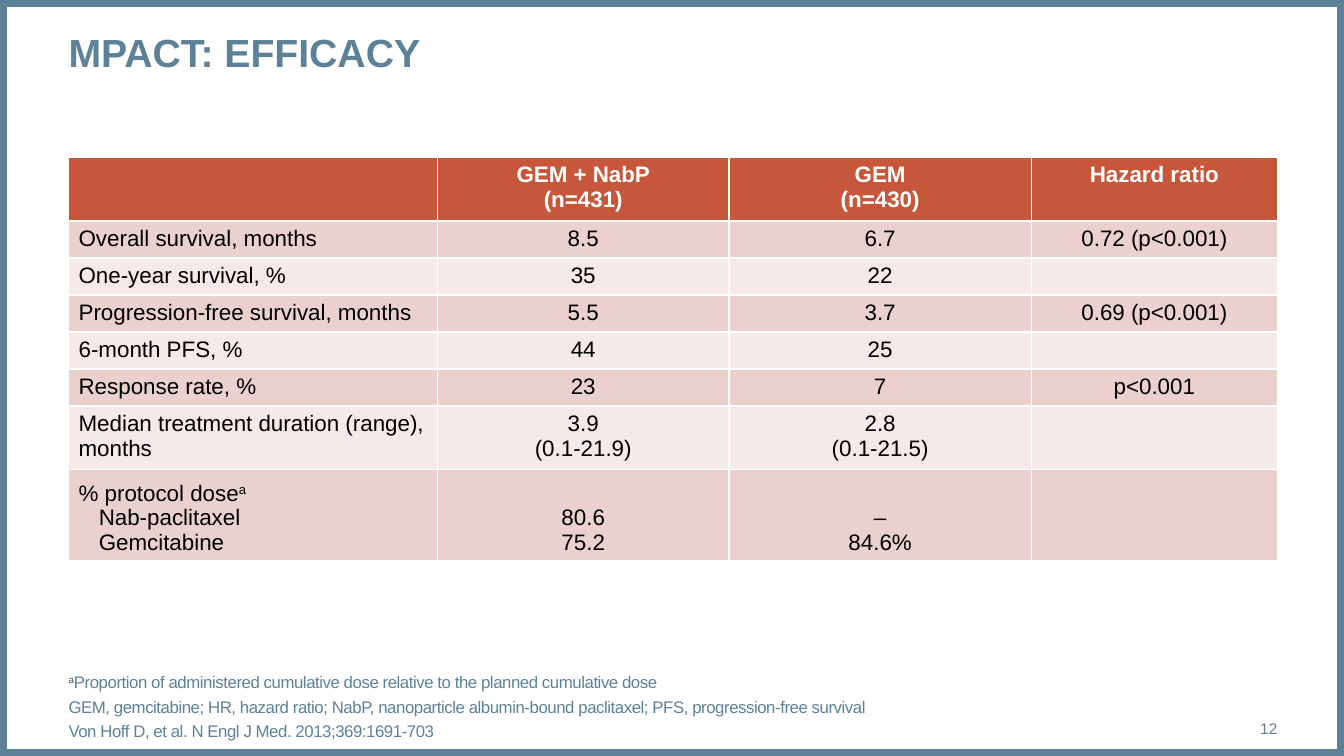
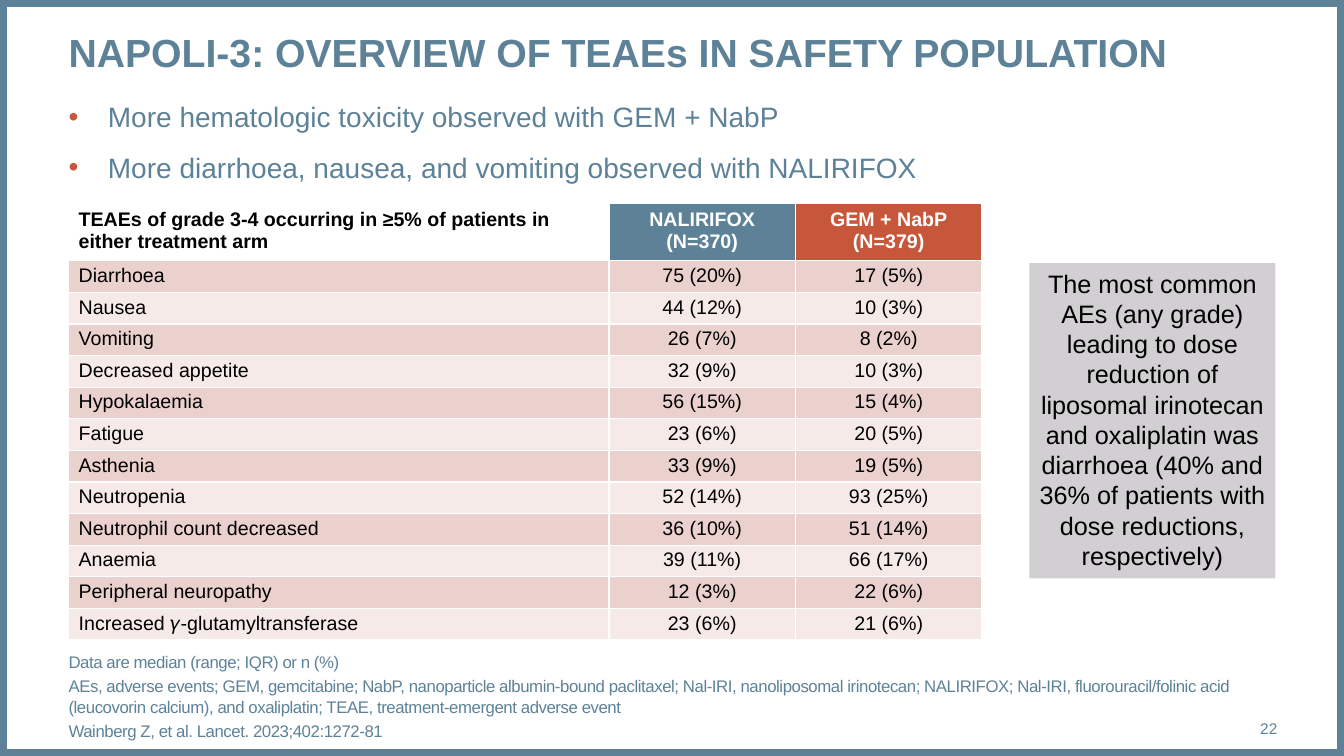
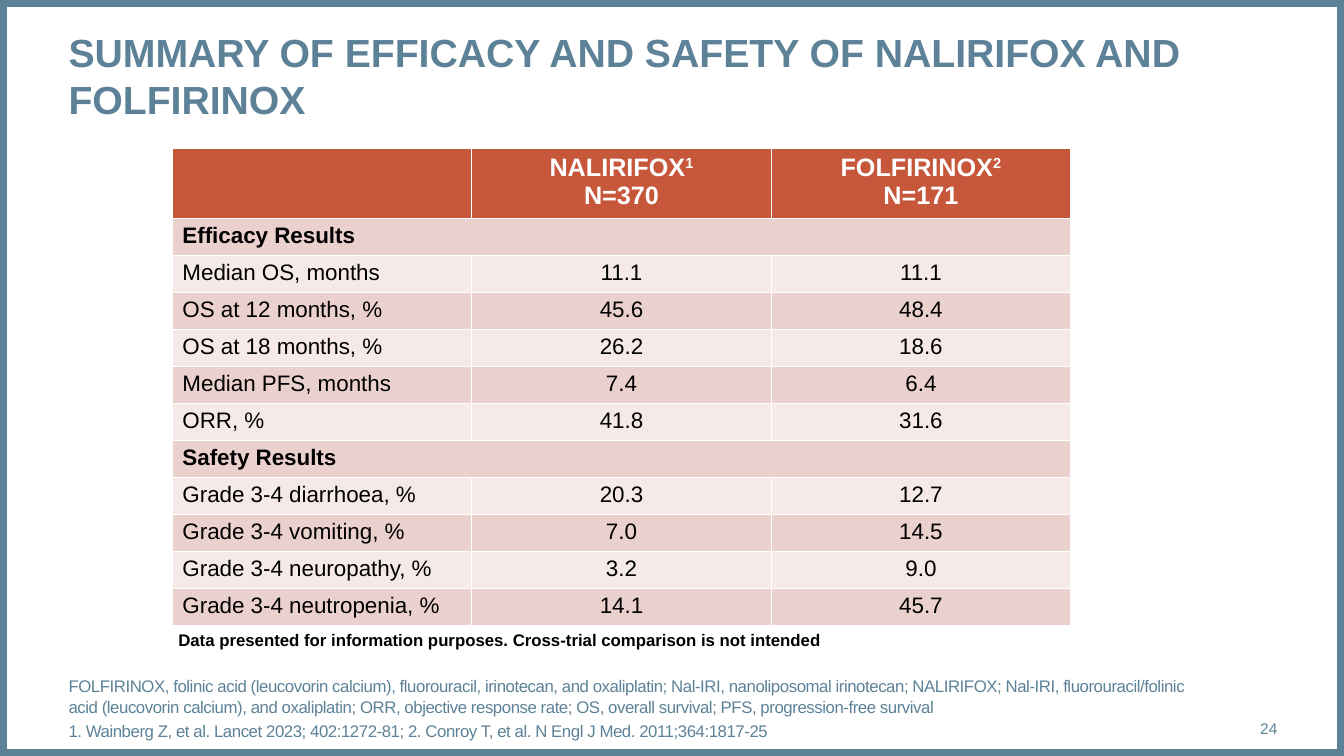
from lxml.etree import SubElement
from pptx import Presentation
from pptx.dml.color import RGBColor
from pptx.enum.shapes import MSO_SHAPE
from pptx.enum.text import MSO_ANCHOR, PP_ALIGN
from pptx.oxml.ns import qn
from pptx.util import Inches, Pt


class Theme:
    font = "Arial"
    blue, red, white, black = "5D8298", "C6573B", "FFFFFF", "000000"
    bands = ("EAD1CE", "F5EAE8")
    callout, marker = "D1CFD1", "505050"
    title, bullet, footer, number, note, box = 28, 20, 12, 11, 12, 18
    left, width = 0.68, 11.99


# "^x^" is superscript, "\n" starts a paragraph, "> " indents one;
# a table row with a single entry spans the whole table.
SLIDES = [
    {
        "title": "MPACT: EFFICACY",
        "number": "12",
        "footer": [
            "^a^Proportion of administered cumulative dose relative to the planned cumulative dose",
            "GEM, gemcitabine; HR, hazard ratio; NabP, nanoparticle albumin-bound paclitaxel; "
            "PFS, progression-free survival",
            "Von Hoff D, et al. N Engl J Med. 2013;369:1691-703",
        ],
        "footer_box": (11.13, 0.68),
        "table": {
            "at": (0.68, 1.56), "cols": (3.66, 2.89, 3, 2.44),
            "heights": [0.58] + [0.34] * 5 + [0.59, 0.84],
            "size": 16, "head_size": 16, "pad": 0.05,
            "head_fills": [Theme.red] * 4,
            "rows": [
                ("", "GEM + NabP\n(n=431)", "GEM\n(n=430)", "Hazard ratio"),
                ("Overall survival, months", "8.5", "6.7", "0.72 (p<0.001)"),
                ("One-year survival, %", "35", "22", ""),
                ("Progression-free survival, months", "5.5", "3.7", "0.69 (p<0.001)"),
                ("6-month PFS, %", "44", "25", ""),
                ("Response rate, %", "23", "7", "p<0.001"),
                ("Median treatment duration (range), months",
                 "3.9\n(0.1-21.9)", "2.8\n(0.1-21.5)", ""),
                ("% protocol dose^a^\n> Nab-paclitaxel\n> Gemcitabine",
                 "80.6\n75.2", "–\n84.6%", ""),
            ],
        },
    },
    {
        "title": "NAPOLI-3: OVERVIEW OF TEAEs IN SAFETY POPULATION",
        "number": "22",
        "bullets": [
            "More hematologic toxicity observed with GEM + NabP",
            "More diarrhoea, nausea, and vomiting observed with NALIRIFOX",
        ],
        "callout": "The most common AEs (any grade) leading to dose reduction of liposomal "
                   "irinotecan and oxaliplatin was diarrhoea (40% and 36% of patients with "
                   "dose reductions, respectively)",
        "footer": [
            "Data are median (range; IQR) or n (%)",
            "AEs, adverse events; GEM, gemcitabine; NabP, nanoparticle albumin-bound paclitaxel; "
            "Nal-IRI, nanoliposomal irinotecan; NALIRIFOX; Nal-IRI, fluorouracil/folinic acid "
            "(leucovorin calcium), and oxaliplatin; TEAE, treatment-emergent adverse event",
            "Wainberg Z, et al. Lancet. 2023;402:1272-81",
        ],
        "footer_box": (11.99, 0.88),
        "table": {
            "at": (0.68, 2.02), "cols": (5.36, 1.85, 1.85),
            "heights": [0.53] + [0.29] * 12,
            "size": 14, "head_size": 14, "pad": 0.04,
            "head_fills": [Theme.white, Theme.blue, Theme.red],
            "rows": [
                ("TEAEs of grade 3-4 occurring in ≥5% of patients in either treatment arm",
                 "NALIRIFOX\n(N=370)", "GEM + NabP\n(N=379)"),
                ("Diarrhoea", "75 (20%)", "17 (5%)"),
                ("Nausea", "44 (12%)", "10 (3%)"),
                ("Vomiting", "26 (7%)", "8 (2%)"),
                ("Decreased appetite", "32 (9%)", "10 (3%)"),
                ("Hypokalaemia", "56 (15%)", "15 (4%)"),
                ("Fatigue", "23 (6%)", "20 (5%)"),
                ("Asthenia", "33 (9%)", "19 (5%)"),
                ("Neutropenia", "52 (14%)", "93 (25%)"),
                ("Neutrophil count decreased", "36 (10%)", "51 (14%)"),
                ("Anaemia", "39 (11%)", "66 (17%)"),
                ("Peripheral neuropathy", "12 (3%)", "22 (6%)"),
                ("Increased 𝛾-glutamyltransferase", "23 (6%)", "21 (6%)"),
            ],
        },
    },
    {
        "title": "SUMMARY OF EFFICACY AND SAFETY OF NALIRIFOX AND FOLFIRINOX",
        "number": "24",
        "note": "Data presented for information purposes. Cross-trial comparison is not intended",
        "footer": [
            "FOLFIRINOX, folinic acid (leucovorin calcium), fluorouracil, irinotecan, and "
            "oxaliplatin; Nal-IRI, nanoliposomal irinotecan; NALIRIFOX; Nal-IRI, "
            "fluorouracil/folinic acid (leucovorin calcium), and oxaliplatin; ORR, objective "
            "response rate; OS, overall survival; PFS, progression-free survival",
            "1. Wainberg Z, et al. Lancet 2023; 402:1272-81; 2. Conroy T, et al. "
            "N Engl J Med. 2011;364:1817-25",
        ],
        "footer_box": (11.13, 0.64),
        "table": {
            "at": (1.71, 1.47), "cols": (2.97, 2.97, 2.97),
            "heights": [0.65] + [0.34] * 11,
            "size": 16, "head_size": 18, "pad": 0.05,
            "head_fills": [Theme.red] * 3,
            "rows": [
                ("", "NALIRIFOX^1^\nN=370", "FOLFIRINOX^2^\nN=171"),
                ("Efficacy Results",),
                ("Median OS, months", "11.1", "11.1"),
                ("OS at 12 months, %", "45.6", "48.4"),
                ("OS at 18 months, %", "26.2", "18.6"),
                ("Median PFS, months", "7.4", "6.4"),
                ("ORR, %", "41.8", "31.6"),
                ("Safety Results",),
                ("Grade 3-4 diarrhoea, %", "20.3", "12.7"),
                ("Grade 3-4 vomiting, %", "7.0", "14.5"),
                ("Grade 3-4 neuropathy, %", "3.2", "9.0"),
                ("Grade 3-4 neutropenia, %", "14.1", "45.7"),
            ],
        },
    },
]


def rgb(color):
    return RGBColor.from_string(color)


def add_runs(p, text, size, color, bold=False, spc=None, marker=None):
    for i, part in enumerate(text.split("^")):
        if not part:
            continue
        raised = i % 2 == 1
        r = p.add_run()
        r.text = part
        for name, value in {"name": Theme.font, "size": Pt(size), "bold": bold}.items():
            setattr(r.font, name, value)
        r.font.color.rgb = rgb(marker if raised and marker else color)
        if raised:
            r.font._element.set("baseline", "30000")
        if spc:
            r.font._element.set("spc", str(spc))


def set_margins(target, x, y):
    for side, value in {"left": x, "right": x, "top": y, "bottom": y}.items():
        setattr(target, f"margin_{side}", Inches(value))


def fill_text(tf, paragraphs, size, color, align=PP_ALIGN.LEFT, space=0, bullet=False,
              **run_format):
    for i, text in enumerate(paragraphs):
        p = tf.paragraphs[0] if i == 0 else tf.add_paragraph()
        p.alignment = align
        if i and space:
            p.space_before = Pt(space)
        pPr = p._p.get_or_add_pPr()
        if bullet:
            pPr.set("marL", str(Inches(0.39)))
            pPr.set("indent", str(-Inches(0.39)))
            clr = SubElement(pPr, qn("a:buClr"))
            SubElement(clr, qn("a:srgbClr"), val=Theme.red)
            SubElement(pPr, qn("a:buFont"), typeface=Theme.font)
            SubElement(pPr, qn("a:buChar"), char="•")
        if text.startswith("> "):
            pPr.set("marL", str(Inches(0.2)))
            text = text[2:]
        add_runs(p, text, size, color, **run_format)
        if not text:
            SubElement(p._p, qn("a:endParaRPr"), sz=str(size * 100))


def add_text(s, at, paragraphs, size, color, anchor=MSO_ANCHOR.TOP, pad=(0, 0), wrap=True,
             **text_format):
    tf = s.shapes.add_textbox(*map(Inches, at)).text_frame
    tf.word_wrap, tf.vertical_anchor = wrap, anchor
    set_margins(tf, *pad)
    fill_text(tf, paragraphs, size, color, **text_format)


def add_rect(s, at, fill=None, line=None):
    sp = s.shapes.add_shape(MSO_SHAPE.RECTANGLE, *map(Inches, at))
    sp.shadow.inherit = False
    if fill:
        sp.fill.solid()
        sp.fill.fore_color.rgb = rgb(fill)
    else:
        sp.fill.background()
    if line:
        sp.line.color.rgb, sp.line.width = rgb(line), Pt(10)
    else:
        sp.line.fill.background()
    return sp


def add_data_table(s, at, cols, heights, size, head_size, pad, head_fills, rows):
    """Fills are set here; the white rules come from the default table style."""
    box = (*at, sum(cols), sum(heights))
    table = s.shapes.add_table(len(rows), len(cols), *map(Inches, box)).table
    for col, width in zip(table.columns, cols):
        col.width = Inches(width)
    for i, (row, height) in enumerate(zip(rows, heights)):
        table.rows[i].height = Inches(height)
        section, head = len(row) == 1, i == 0
        if section:
            table.cell(i, 0).merge(table.cell(i, len(cols) - 1))
        indented = any("> " in text for text in row)
        for j, fill in enumerate(head_fills):
            cell = table.cell(i, j)
            if not head:
                fill = Theme.bands[(i - 1) % 2]
            cell.fill.solid()
            cell.fill.fore_color.rgb = rgb(fill)
            set_margins(cell, 0.1, 0.05 if head else pad)
            cell.vertical_anchor = MSO_ANCHOR.BOTTOM if indented else MSO_ANCHOR.TOP
            text = row[j] if j < len(row) else ""
            fill_text(cell.text_frame, text.split("\n"), head_size if head else size,
                      Theme.white if head and fill != Theme.white else Theme.black,
                      align=PP_ALIGN.CENTER if j else PP_ALIGN.LEFT,
                      bold=head or section)


def add_callout(s, text):
    sp = add_rect(s, (10.21, 2.61, 2.44, 3.13), fill=Theme.callout)
    tf = sp.text_frame
    tf.word_wrap, tf.vertical_anchor = True, MSO_ANCHOR.TOP
    set_margins(tf, 0.1, 0.05)
    fill_text(tf, [text], Theme.box, Theme.black, align=PP_ALIGN.CENTER)


def build_slide(prs, data):
    s = prs.slides.add_slide(prs.slide_layouts[6])
    add_rect(s, (0, 0, 13.33, 7.5), line=Theme.blue)
    add_text(s, (Theme.left, 0.28, Theme.width, 0.94), [data["title"]],
             Theme.title, Theme.blue, bold=True)
    if "bullets" in data:
        add_text(s, (Theme.left, 0.99, Theme.width, 0.95), data["bullets"],
                 Theme.bullet, Theme.blue, space=12, bullet=True)
    add_data_table(s, **data["table"])
    if "callout" in data:
        add_callout(s, data["callout"])
    if "note" in data:
        add_text(s, (1.67, 6.2, 6.74, 0.3), [data["note"]], Theme.note, Theme.black,
                 pad=(0.1, 0.05), wrap=False, bold=True)
    width, height = data["footer_box"]
    add_text(s, (Theme.left, 7.35 - height, width, height), data["footer"],
             Theme.footer, Theme.blue, anchor=MSO_ANCHOR.BOTTOM, space=3, spc=-30,
             marker=Theme.marker)
    add_text(s, (11.81, 7.03, 0.86, 0.4), [data["number"]], Theme.number, Theme.blue,
             anchor=MSO_ANCHOR.MIDDLE, align=PP_ALIGN.RIGHT)


def main():
    prs = Presentation()
    prs.slide_width, prs.slide_height = Inches(13.33), Inches(7.5)
    for data in SLIDES:
        build_slide(prs, data)
    prs.save("out.pptx")


if __name__ == "__main__":
    main()
